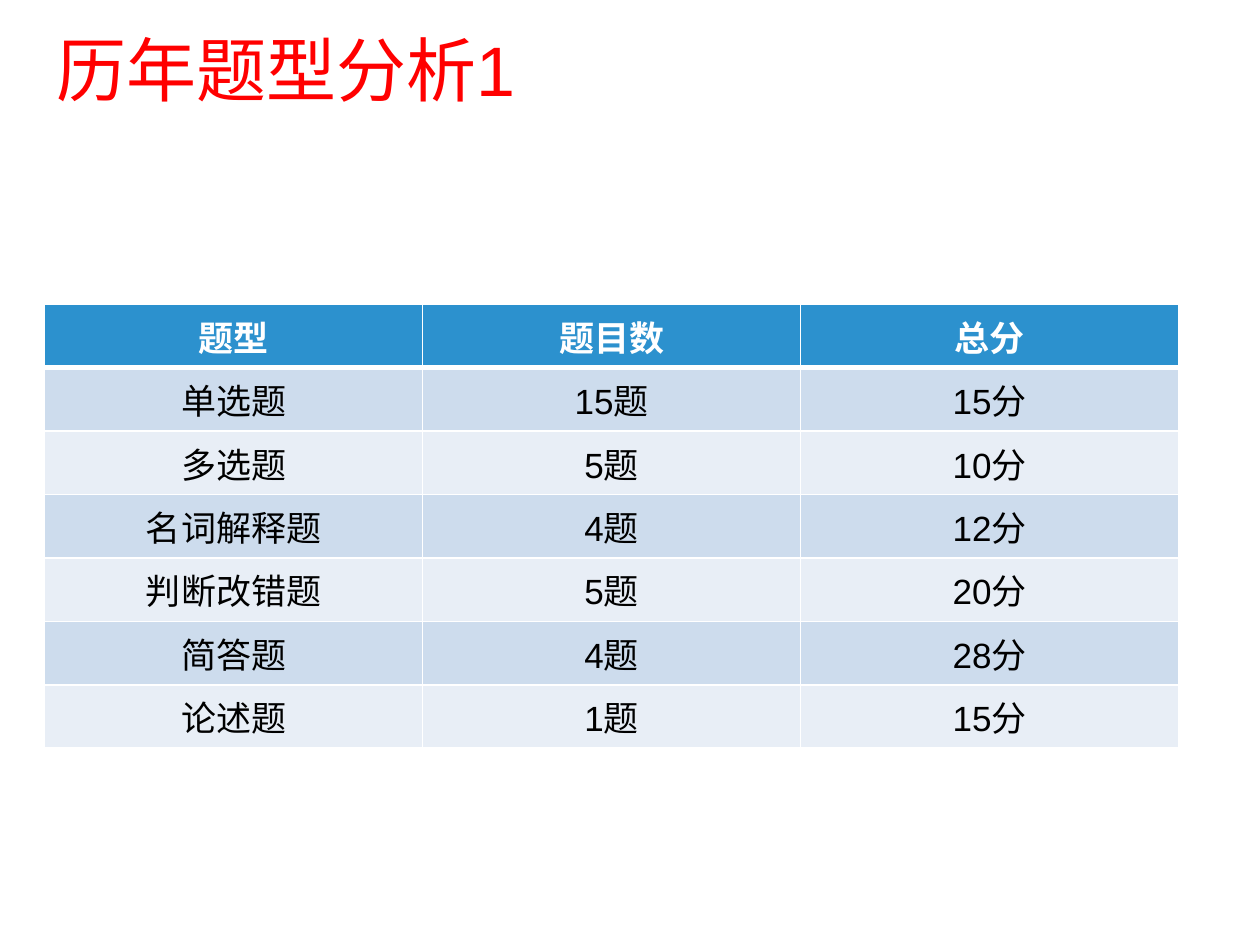
from lxml.etree import SubElement
from pptx import Presentation
from pptx.dml.color import RGBColor
from pptx.enum.text import MSO_ANCHOR, PP_ALIGN
from pptx.oxml.ns import qn
from pptx.util import Cm, Pt

COLORS = {
    "title": "FF0000",
    "header": "2C91CE",
    "header_text": "FFFFFF",
    "odd_row": "CDDCED",
    "even_row": "E8EEF6",
    "body_text": "000000",
    "border": "FFFFFF",
}
FONT = "Arial"
QUESTION_TYPES = [
    ("题型", "题目数", "总分"),
    ("单选题", "15题", "15分"),
    ("多选题", "5题", "10分"),
    ("名词解释题", "4题", "12分"),
    ("判断改错题", "5题", "20分"),
    ("简答题", "4题", "28分"),
    ("论述题", "1题", "15分"),
]


def rgb(name):
    return RGBColor.from_string(COLORS[name])


def style_font(p, size, color, bold=False):
    p.font.name = FONT
    p.font.size = Pt(size)
    p.font.bold = bold
    p.font.color.rgb = rgb(color)


def set_borders(cell, top, bottom):
    """Draw the four cell borders; top and bottom are widths in points."""
    tc_pr = cell._tc.get_or_add_tcPr()
    for side, width in (("L", 1), ("R", 1), ("T", top), ("B", bottom)):
        ln = SubElement(tc_pr, qn(f"a:ln{side}"), w=str(Pt(width)))
        fill = SubElement(ln, qn("a:solidFill"))
        SubElement(fill, qn("a:srgbClr"), val=COLORS["border"])


def add_title(slide, text, left, top, width, height):
    tf = slide.shapes.add_textbox(left, top, width, height).text_frame
    tf.word_wrap = True
    tf.vertical_anchor = MSO_ANCHOR.MIDDLE
    p = tf.paragraphs[0]
    p.text = text
    p.line_spacing = 0.9
    style_font(p, 40, "title")


def add_question_table(slide, rows, left, top, width, row_height):
    table = slide.shapes.add_table(
        len(rows), len(rows[0]), left, top, width, row_height * len(rows)
    ).table
    for i, row in enumerate(rows):
        header = i == 0
        fill = "header" if header else "odd_row" if i % 2 else "even_row"
        for j, text in enumerate(row):
            cell = table.cell(i, j)
            set_borders(cell, top=3 if i == 1 else 1, bottom=3 if header else 1)
            cell.fill.solid()
            cell.fill.fore_color.rgb = rgb(fill)
            p = cell.text_frame.paragraphs[0]
            p.text = text
            p.alignment = PP_ALIGN.CENTER
            style_font(p, 20, "header_text" if header else "body_text", header)


def main():
    prs = Presentation()
    prs.slide_width, prs.slide_height = Cm(25.4), Cm(19.05)
    slide = prs.slides.add_slide(prs.slide_layouts[6])
    left, width = Cm(0.9), Cm(22.86)
    add_question_table(slide, QUESTION_TYPES, left, Cm(6.13), width, Cm(1.04))
    add_title(slide, "历年题型分析1", left, Cm(0), width, Cm(2.97))
    prs.save("out.pptx")


if __name__ == "__main__":
    main()
